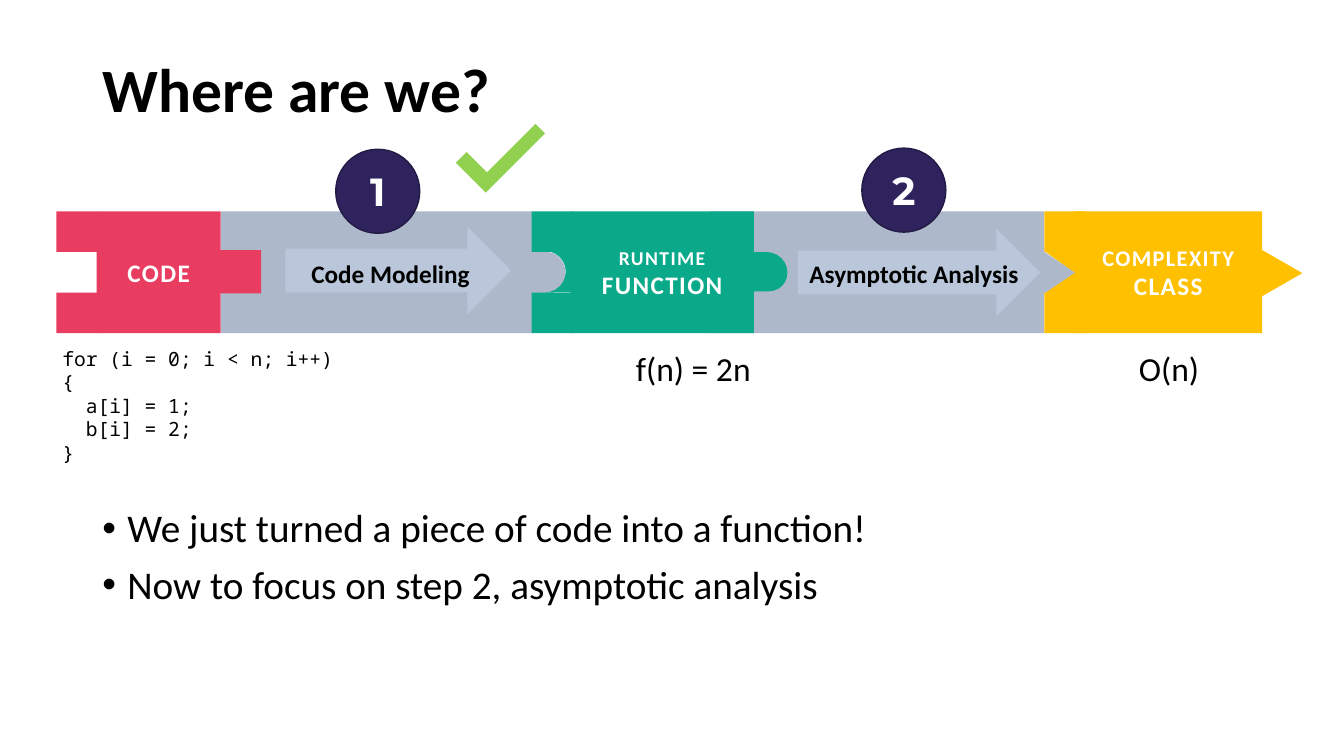
from pptx import Presentation
from pptx.dml.color import RGBColor
from pptx.enum.shapes import MSO_SHAPE
from pptx.enum.text import MSO_ANCHOR, PP_ALIGN
from pptx.oxml.ns import qn
from pptx.util import Pt
from lxml import etree

COLORS = {
    "black": "000000", "white": "FFFFFF", "code": "E83C60",
    "function": "09A98A", "complexity": "FFC000", "step": "ADB9CA",
    "arrow": "BAC7DA", "badge": "2E235D", "badge_line": "221A45",
    "check": "92D050",
}
BAND_TOP, BAND_HEIGHT, TAB = 151, 87, 29


def color(name):
    return RGBColor.from_string(COLORS[name])


def add_bullet(paragraph):
    properties = paragraph._p.get_or_add_pPr()
    properties.set("marL", str(Pt(18)))
    properties.set("indent", str(-Pt(18)))
    font = etree.SubElement(properties, qn("a:buFont"))
    font.set("typeface", "Arial")
    etree.SubElement(properties, qn("a:buChar")).set("char", "•")


def write(frame, text, size=18, font="Calibri", fill="black", bold=False,
          align=PP_ALIGN.LEFT, anchor=MSO_ANCHOR.TOP, wrap=True, tracking=0,
          line_spacing=None, gap=0, bullet=False):
    """Write one paragraph per line; size may list one size per line."""
    frame.word_wrap = wrap
    frame.vertical_anchor = anchor
    lines = text.split("\n")
    sizes = size if isinstance(size, list) else [size] * len(lines)
    for index, (line, line_size) in enumerate(zip(lines, sizes)):
        paragraph = frame.add_paragraph() if index else frame.paragraphs[0]
        paragraph.alignment = align
        if line_spacing:
            paragraph.line_spacing = line_spacing
        if index and gap:
            paragraph.space_before = Pt(gap)
        if bullet:
            add_bullet(paragraph)
        run = paragraph.add_run()
        run.text = line
        run.font.size = Pt(line_size)
        run.font.name = font
        run.font.bold = bold
        run.font.color.rgb = color(fill)
        if tracking:
            run._r.get_or_add_rPr().set("spc", str(tracking * 100))


def add_text(slide, text, left, top, width, height, **text_format):
    box = slide.shapes.add_textbox(Pt(left), Pt(top), Pt(width), Pt(height))
    write(box.text_frame, text, **text_format)


def add_shape(slide, kind, fill, left, top, width, height, rotation=0, line=None):
    shape = slide.shapes.add_shape(kind, Pt(left), Pt(top), Pt(width), Pt(height))
    shape.shadow.inherit = False
    shape.fill.solid()
    shape.fill.fore_color.rgb = color(fill)
    shape.rotation = rotation
    if line:
        shape.line.color.rgb = color(line)
        shape.line.width = Pt(1)
    else:
        shape.line.fill.background()
    return shape


def add_block(slide, fill, left, width, text="", size=18):
    """Add a full-height piece of the band."""
    block = add_shape(slide, MSO_SHAPE.RECTANGLE, fill, left, BAND_TOP, width, BAND_HEIGHT)
    if text:
        write(block.text_frame, text, size=size, fill="white", bold=True,
              align=PP_ALIGN.CENTER, anchor=MSO_ANCHOR.MIDDLE, tracking=1)


def add_tab_pair(slide, fill, left):
    """Add the squares above and below a puzzle joint."""
    for top in (BAND_TOP, BAND_TOP + BAND_HEIGHT - TAB):
        add_shape(slide, MSO_SHAPE.RECTANGLE, fill, left, top, TAB, TAB)


def add_round_joint(slide, fill, left, top, width, height):
    joint = add_shape(slide, MSO_SHAPE.FLOWCHART_STORED_DATA, fill, left, top, width, height)
    joint._element.spPr.get_or_add_xfrm().set("flipH", "1")


def add_badge(slide, number, left, top):
    badge = add_shape(slide, MSO_SHAPE.OVAL, "badge", left, top, 60, 60, line="badge_line")
    write(badge.text_frame, number, size=28, font="Montserrat", fill="white",
          bold=True, align=PP_ALIGN.CENTER, anchor=MSO_ANCHOR.MIDDLE)


def add_step_arrow(slide, left, top, width):
    add_shape(slide, MSO_SHAPE.RIGHT_ARROW, "arrow", left, top, width, 62.6)


def add_band(slide):
    triangle = MSO_SHAPE.ISOSCELES_TRIANGLE
    add_block(slide, "complexity", 767.5, 134, "COMPLEXITY\nCLASS", [16, 18])
    add_shape(slide, MSO_SHAPE.FLOWCHART_COLLATE, "complexity", 746, 179.3, 41.8, 30.2)
    add_shape(slide, triangle, "step", 741.6, 183.6, 30.2, 22.3, rotation=90)
    for tab_left, block_left, block_width in ((157.7, 186.5, 193.7), (506.9, 535.7, 210.2)):
        add_tab_pair(slide, "step", tab_left)
        add_block(slide, "step", block_left, block_width)
    add_round_joint(slide, "function", 479.5, 180, 83.5, 28.1)
    add_round_joint(slide, "step", 327.6, 180, 76.3, 30.2)
    add_round_joint(slide, "function", 389.5, 179.3, 87.8, 29.5)
    add_tab_pair(slide, "function", 379.8)
    add_block(slide, "code", 69.1, 88.6, "CODE")
    add_shape(slide, MSO_SHAPE.RECTANGLE, "code", 153.4, 178.6, 33.1, 31)
    add_tab_pair(slide, "complexity", 745.9)
    add_tab_pair(slide, "code", 40.3)
    add_shape(slide, triangle, "complexity", 899.3, 180.7, 33.1, 28.8, rotation=90)
    add_step_arrow(slide, 203.8, 162, 161.3)
    add_block(slide, "function", 407.5, 131, "RUNTIME\nFUNCTION", [14, 18])
    add_round_joint(slide, "step", 547.9, 180, 87.8, 29.5)
    add_step_arrow(slide, 570.2, 163.4, 172.8)
    add_text(slide, "Code Modeling", 215.3, 180.7, 128.2, 28.8, bold=True, wrap=False)
    add_text(slide, "Asymptotic Analysis", 571, 180.7, 164.9, 28.8, bold=True, wrap=False)


def main():
    presentation = Presentation()
    presentation.slide_width, presentation.slide_height = Pt(960), Pt(540)
    slide = presentation.slides.add_slide(presentation.slide_layouts[6])

    add_text(slide, "Where are we?", 66, 36, 828, 60, size=44, bold=True,
             anchor=MSO_ANCHOR.MIDDLE, line_spacing=0.9)
    add_text(slide, "We just turned a piece of code into a function!\n"
             "Now to focus on step 2, asymptotic analysis",
             66, 360, 828, 127, size=28, line_spacing=0.9, gap=10, bullet=True)

    add_band(slide)
    add_badge(slide, "1", 239.8, 106.6)
    add_badge(slide, "2", 615.6, 105.8)

    add_text(slide, "for (i = 0; i < n; i++) {\n  a[i] = 1;\n  b[i] = 2;\n}",
             37.4, 244, 210.2, 75, size=14, font="Noto Sans Mono")
    add_text(slide, "O(n)", 806.4, 244.8, 58.3, 36, size=24, wrap=False)
    add_text(slide, "f(n) = 2n", 447.1, 244.8, 97.2, 36, size=24, wrap=False)

    check = add_shape(slide, MSO_SHAPE.CORNER, "check", 327.6, 90.7, 59.8, 30.2, rotation=315)
    check.adjustments[0], check.adjustments[1] = 0.32, 0.36
    presentation.save("out.pptx")


if __name__ == "__main__":
    main()
